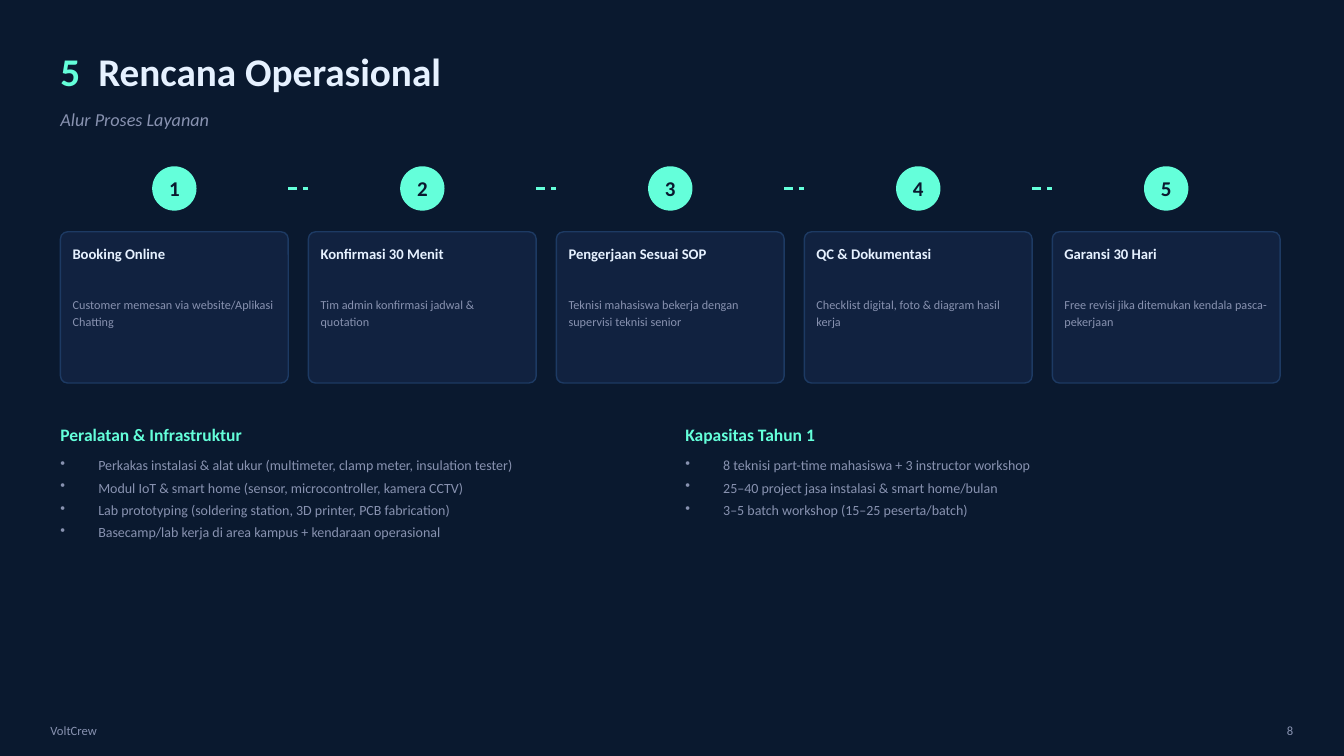
from dataclasses import dataclass

import pptx
import pptx.dml.color
import pptx.enum.dml
import pptx.enum.shapes
import pptx.enum.text
import pptx.oxml
import pptx.oxml.ns
import pptx.util

Pt = pptx.util.Pt
ALIGN = pptx.enum.text.PP_ALIGN
ANCHOR = pptx.enum.text.MSO_ANCHOR
SHAPE = pptx.enum.shapes.MSO_SHAPE


def rgb(value):
    return pptx.dml.color.RGBColor.from_string(value)


@dataclass(frozen=True)
class Style:
    size: float
    color: str
    bold: bool = False
    italic: bool = False


@dataclass(frozen=True)
class Theme:
    font: str = "Calibri"
    background: str = "0A192F"
    accent: str = "64FFDA"
    card: str = "112240"
    border: str = "1D3A63"
    section: Style = Style(28, "64FFDA", bold=True)
    title: Style = Style(28, "E6F1FF", bold=True)
    subtitle: Style = Style(13, "8892B0", italic=True)
    badge: Style = Style(15, "0A192F", bold=True)
    step: Style = Style(10.5, "E6F1FF", bold=True)
    detail: Style = Style(8.7, "8892B0")
    heading: Style = Style(12.5, "64FFDA", bold=True)
    item: Style = Style(10, "8892B0")
    footer: Style = Style(9, "8892B0")


THEME = Theme()
MARGIN = 43.2
CARD_WIDTH, CARD_GAP = 162.72, 14.4
BADGE_SIZE, BADGE_TOP = 31.68, 118.8
CARD_TOP, CARD_HEIGHT = 165.6, 108
CARD_PADDING = 8.64
COLUMN_WIDTH, COLUMN_PITCH = 424.8, 446.4
INDENT = 27

STEPS = [
    ("Booking Online", "Customer memesan via website/Aplikasi Chatting"),
    ("Konfirmasi 30 Menit", "Tim admin konfirmasi jadwal & quotation"),
    ("Pengerjaan Sesuai SOP",
     "Teknisi mahasiswa bekerja dengan supervisi teknisi senior"),
    ("QC & Dokumentasi", "Checklist digital, foto & diagram hasil kerja"),
    ("Garansi 30 Hari", "Free revisi jika ditemukan kendala pasca-pekerjaan"),
]
COLUMNS = [
    ("Peralatan & Infrastruktur", [
        "Perkakas instalasi & alat ukur (multimeter, clamp meter, insulation tester)",
        "Modul IoT & smart home (sensor, microcontroller, kamera CCTV)",
        "Lab prototyping (soldering station, 3D printer, PCB fabrication)",
        "Basecamp/lab kerja di area kampus + kendaraan operasional",
    ]),
    ("Kapasitas Tahun 1", [
        "8 teknisi part-time mahasiswa + 3 instructor workshop",
        "25–40 project jasa instalasi & smart home/bulan",
        "3–5 batch workshop (15–25 peserta/batch)",
    ]),
]


def set_all(target, values):
    for name, value in values.items():
        setattr(target, name, value)


def add_run(paragraph, text, style):
    run = paragraph.add_run()
    run.text = text
    set_all(run.font, {"name": THEME.font, "size": Pt(style.size),
                       "bold": style.bold, "italic": style.italic})
    run.font.color.rgb = rgb(style.color)


def prepare_frame(frame, anchor):
    """Remove insets and fix wrapping, sizing and anchoring."""
    set_all(frame, {"margin_left": 0, "margin_right": 0, "margin_top": 0,
                    "margin_bottom": 0, "word_wrap": True,
                    "auto_size": pptx.enum.text.MSO_AUTO_SIZE.NONE,
                    "vertical_anchor": anchor})


def add_label(slide, box, text, style, anchor=ANCHOR.MIDDLE, **paragraph_format):
    frame = slide.shapes.add_textbox(*map(Pt, box)).text_frame
    prepare_frame(frame, anchor)
    paragraph = frame.paragraphs[0]
    set_all(paragraph, paragraph_format)
    add_run(paragraph, text, style)


def add_bullets(slide, box, items):
    frame = slide.shapes.add_textbox(*map(Pt, box)).text_frame
    prepare_frame(frame, ANCHOR.TOP)
    for index, item in enumerate(items):
        paragraph = frame.add_paragraph() if index else frame.paragraphs[0]
        properties = paragraph._p.get_or_add_pPr()
        properties.set("marL", str(Pt(INDENT)))
        properties.set("indent", str(-Pt(INDENT)))
        bullet = pptx.oxml.parse_xml(
            f'<a:buChar {pptx.oxml.ns.nsdecls("a")} char="•"/>')
        properties.append(bullet)
        paragraph.space_after = Pt(4)
        add_run(paragraph, item, THEME.item)


def add_panel(slide, kind, box, fill, border=None):
    panel = slide.shapes.add_shape(kind, *map(Pt, box))
    panel.shadow.inherit = False
    panel.fill.solid()
    panel.fill.fore_color.rgb = rgb(fill)
    if border:
        panel.line.color.rgb = rgb(border)
        panel.line.width = Pt(1)
    else:
        panel.line.fill.background()
    return panel


def add_title(slide, number, text):
    title = slide.shapes.title
    set_all(title, {"left": Pt(MARGIN), "top": Pt(25.2),
                    "width": Pt(871.2), "height": Pt(50.4)})
    prepare_frame(title.text_frame, ANCHOR.MIDDLE)
    paragraph = title.text_frame.paragraphs[0]
    paragraph.alignment = ALIGN.LEFT
    paragraph._p.get_or_add_pPr().append(pptx.oxml.parse_xml(
        f'<a:tabLst {pptx.oxml.ns.nsdecls("a")}>'
        f'<a:tab pos="{Pt(INDENT)}" algn="l"/></a:tabLst>'))
    add_run(paragraph, f"{number}\t", THEME.section)
    add_run(paragraph, text, THEME.title)


def add_dash(slide, left, right, y):
    dash = slide.shapes.add_connector(
        pptx.enum.shapes.MSO_CONNECTOR.STRAIGHT, Pt(left), Pt(y), Pt(right), Pt(y))
    dash.line.color.rgb = rgb(THEME.accent)
    dash.line.width = Pt(1.5)
    dash.line.dash_style = pptx.enum.dml.MSO_LINE.DASH
    dash._element.spPr.append(pptx.oxml.parse_xml(
        f'<a:effectLst {pptx.oxml.ns.nsdecls("a")}/>'))


def add_step(slide, index, name, detail):
    left = MARGIN + index * (CARD_WIDTH + CARD_GAP)
    badge = add_panel(slide, SHAPE.OVAL,
                      (left + (CARD_WIDTH - BADGE_SIZE) / 2, BADGE_TOP,
                       BADGE_SIZE, BADGE_SIZE), THEME.accent)
    prepare_frame(badge.text_frame, ANCHOR.MIDDLE)
    number = badge.text_frame.paragraphs[0]
    number.alignment = ALIGN.CENTER
    add_run(number, str(index + 1), THEME.badge)

    card = add_panel(slide, SHAPE.ROUNDED_RECTANGLE,
                     (left, CARD_TOP, CARD_WIDTH, CARD_HEIGHT),
                     THEME.card, THEME.border)
    card.adjustments[0] = 0.047
    text_left, text_width = left + CARD_PADDING, CARD_WIDTH - 2 * CARD_PADDING
    add_label(slide, (text_left, 174.96, text_width, 36), name, THEME.step, ANCHOR.TOP)
    add_label(slide, (text_left, 210.96, text_width, 57.6), detail, THEME.detail,
              ANCHOR.TOP, line_spacing=1.15)
    if index < len(STEPS) - 1:
        right = left + CARD_WIDTH
        add_dash(slide, right, right + CARD_GAP, BADGE_TOP + BADGE_SIZE / 2)


def main():
    deck = pptx.Presentation()
    deck.slide_width, deck.slide_height = Pt(960), Pt(540)
    slide = deck.slides.add_slide(deck.slide_layouts.get_by_name("Title Only"))
    slide.background.fill.solid()
    slide.background.fill.fore_color.rgb = rgb(THEME.background)

    add_title(slide, 5, "Rencana Operasional")
    add_label(slide, (MARGIN, 70.56, 871.2, 28.8), "Alur Proses Layanan", THEME.subtitle)
    for index, (name, detail) in enumerate(STEPS):
        add_step(slide, index, name, detail)
    for index, (heading, items) in enumerate(COLUMNS):
        left = MARGIN + index * COLUMN_PITCH
        add_label(slide, (left, 298.8, COLUMN_WIDTH, 23.04), heading, THEME.heading)
        add_bullets(slide, (left, 326.16, COLUMN_WIDTH, 133.2), items)
    add_label(slide, (36, 511.2, 216, 21.6), "VoltCrew", THEME.footer)
    add_label(slide, (887.76, 511.2, 36, 21.6), "8", THEME.footer, alignment=ALIGN.RIGHT)
    deck.save("out.pptx")


if __name__ == "__main__":
    main()
